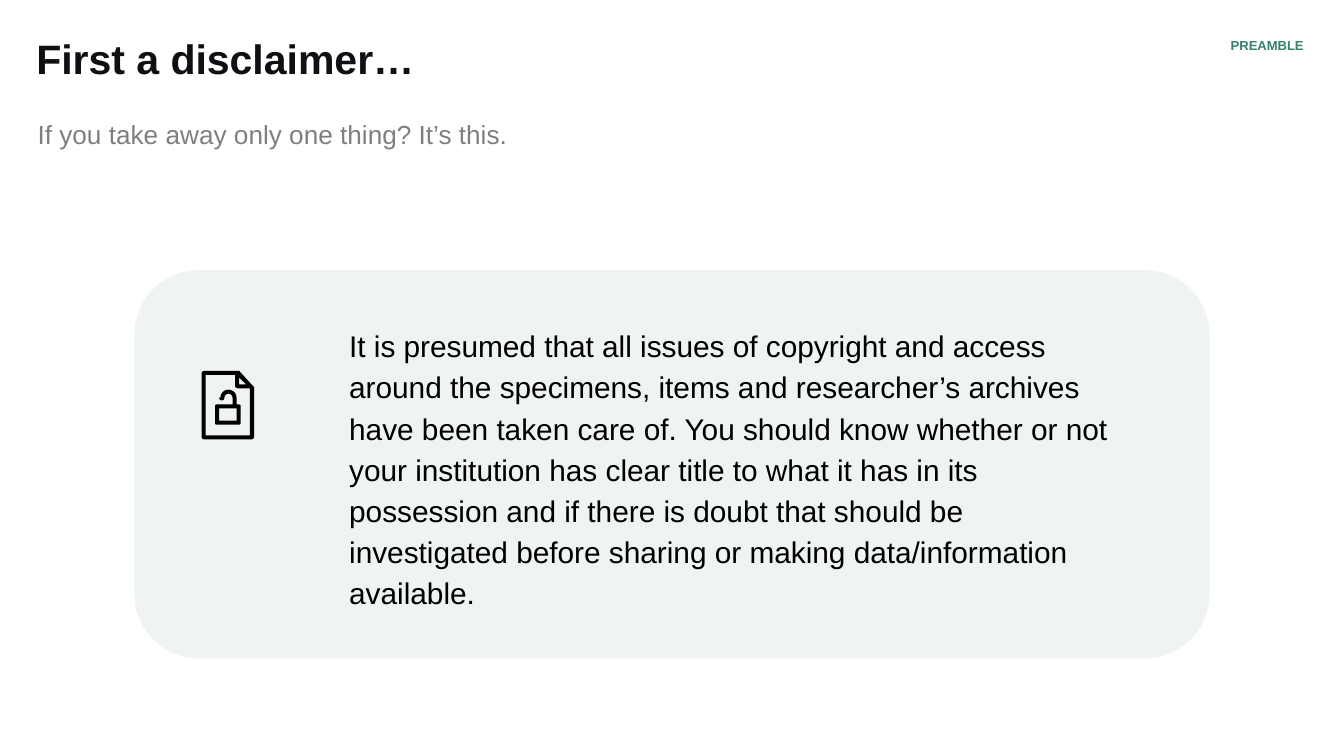
"""Build the disclaimer slide with a rounded panel and an unlocked document icon."""
from math import cos, pi, sin

from pptx import Presentation
from pptx.dml.color import RGBColor
from pptx.enum.shapes import MSO_SHAPE as Shape
from pptx.enum.text import MSO_AUTO_SIZE as AutoSize, PP_ALIGN as Align
from pptx.util import Inches, Pt

PANEL = RGBColor(0xF0, 0xF3, 0xF3)
BLACK = RGBColor(0x00, 0x00, 0x00)
INK = RGBColor(0x0F, 0x0F, 0x14)
GREEN = RGBColor(0x37, 0x81, 0x6E)
GRAY = RGBColor(0x7F, 0x7F, 0x7F)

DISCLAIMER = (
    "It is presumed that all issues of copyright and access around the specimens, "
    "items and researcher’s archives have been taken care of. You should know whether "
    "or not your institution has clear title to what it has in its possession and if "
    "there is doubt that should be investigated before sharing or making "
    "data/information available."
)
TEXTS = [
    dict(text=DISCLAIMER, at=(2.5, 2.4, 6, 2.13), insets=(0.1, 0, 0.1, 0),
         size=16, color=BLACK, spacing=1.15, grow=True),
    dict(text="First a disclaimer…", at=(0.27, 0.29, 7.99, 0.59),
         insets=(0, 0, 0.1, 0.1), size=22, color=INK, bold=True, spacing=0.9),
    dict(text="PREAMBLE", at=(7.57, 0.29, 2.13, 0.16), insets=(0, 0, 0, 0.1),
         size=7, color=GREEN, bold=True, spacing=0.9, align=Align.RIGHT),
    dict(text="If you take away only one thing? It’s this.",
         at=(0.28, 0.88, 7.09, 0.47), insets=(0, 0, 0.1, 0.1), size=14, color=GRAY),
]


def arc(x, y, radius, start, end, steps=16):
    """Return points along an arc, with angles in degrees clockwise from the right."""
    angles = [(start + (end - start) * i / steps) * pi / 180 for i in range(steps + 1)]
    return [(x + radius * cos(a), y + radius * sin(a)) for a in angles]


def rounded(left, top, right, bottom, radius):
    """Return the corner arcs of a rounded rectangle, clockwise from the top left."""
    corners = [(left + radius, top + radius), (right - radius, top + radius),
               (right - radius, bottom - radius), (left + radius, bottom - radius)]
    return [arc(x, y, radius, 180 + 90 * i, 270 + 90 * i, 4)
            for i, (x, y) in enumerate(corners)]


def document_contours():
    """Return the sheet outline, its folded corner and its inside."""
    top_left, _, bottom_right, bottom_left = rounded(1.5, 2.76, 1.89, 3.27, 0.02)
    sheet = top_left + [(1.77, 2.76), (1.78, 2.76), (1.88, 2.87), (1.89, 2.88)]
    fold = [(1.78, 2.81), (1.83, 2.86), (1.78, 2.86)]
    inside = [(1.53, 3.24), (1.53, 2.79), (1.75, 2.79), (1.75, 2.88),
              (1.77, 2.89), (1.86, 2.89), (1.86, 3.24)]
    return [sheet + bottom_right + bottom_left, fold, inside]


def lock_contours():
    """Return the lock body with its open shackle, and the hole in the body."""
    top_left, top_right, bottom_right, bottom_left = rounded(1.6, 3.01, 1.79, 3.16, 0.01)
    shackle = ([(1.73, 3.01)] + arc(1.7, 2.96, 0.03, 0, -180)
               + arc(1.65, 2.96, 0.02, 0, 180, 8)
               + arc(1.7, 2.96, 0.06, -180, 0) + [(1.76, 3.01)])
    hole = [(1.63, 3.04), (1.76, 3.04), (1.76, 3.13), (1.63, 3.13)]
    return [top_left + shackle + top_right + bottom_right + bottom_left, hole]


def paint(shape, color):
    """Give a shape a plain fill without line or shadow."""
    shape.fill.solid()
    shape.fill.fore_color.rgb = color
    shape.line.fill.background()
    shape.shadow.inherit = False


def add_outline(shapes, contours):
    """Draw closed contours as one black freeform."""
    first, *others = [[(Inches(x), Inches(y)) for x, y in points] for points in contours]
    builder = shapes.build_freeform(*first[0])
    builder.add_line_segments(first[1:], close=True)
    for points in others:
        builder.move_to(*points[0])
        builder.add_line_segments(points[1:], close=True)
    paint(builder.convert_to_shape(), BLACK)


def add_text(shapes, text, at, insets, size, color, bold=False, spacing=None,
             align=Align.LEFT, grow=False):
    """Add a wrapped text box holding one paragraph."""
    frame = shapes.add_textbox(*map(Inches, at)).text_frame
    frame.word_wrap = True
    frame.auto_size = AutoSize.SHAPE_TO_FIT_TEXT if grow else AutoSize.NONE
    (frame.margin_left, frame.margin_top,
     frame.margin_right, frame.margin_bottom) = map(Inches, insets)
    para = frame.paragraphs[0]
    para.alignment = align
    para.line_spacing = spacing
    span = para.add_run()
    span.text = text
    span.font.name = "Arial"
    span.font.size = Pt(size)
    span.font.bold = bold
    span.font.color.rgb = color


def main():
    """Assemble and save the deck."""
    deck = Presentation()
    deck.slide_width = Inches(10)
    deck.slide_height = deck.slide_width * 9 // 16
    shapes = deck.slides.add_slide(deck.slide_layouts[6]).shapes
    panel = shapes.add_shape(Shape.ROUNDED_RECTANGLE, *map(Inches, (1, 2.01, 8, 2.89)))
    panel.adjustments[0] = 0.167
    paint(panel, PANEL)
    for item in TEXTS:
        add_text(shapes, **item)
    icon = shapes.add_group_shape()
    for contours in (document_contours(), lock_contours()):
        add_outline(icon.shapes, contours)
    deck.save("out.pptx")


if __name__ == "__main__":
    main()
